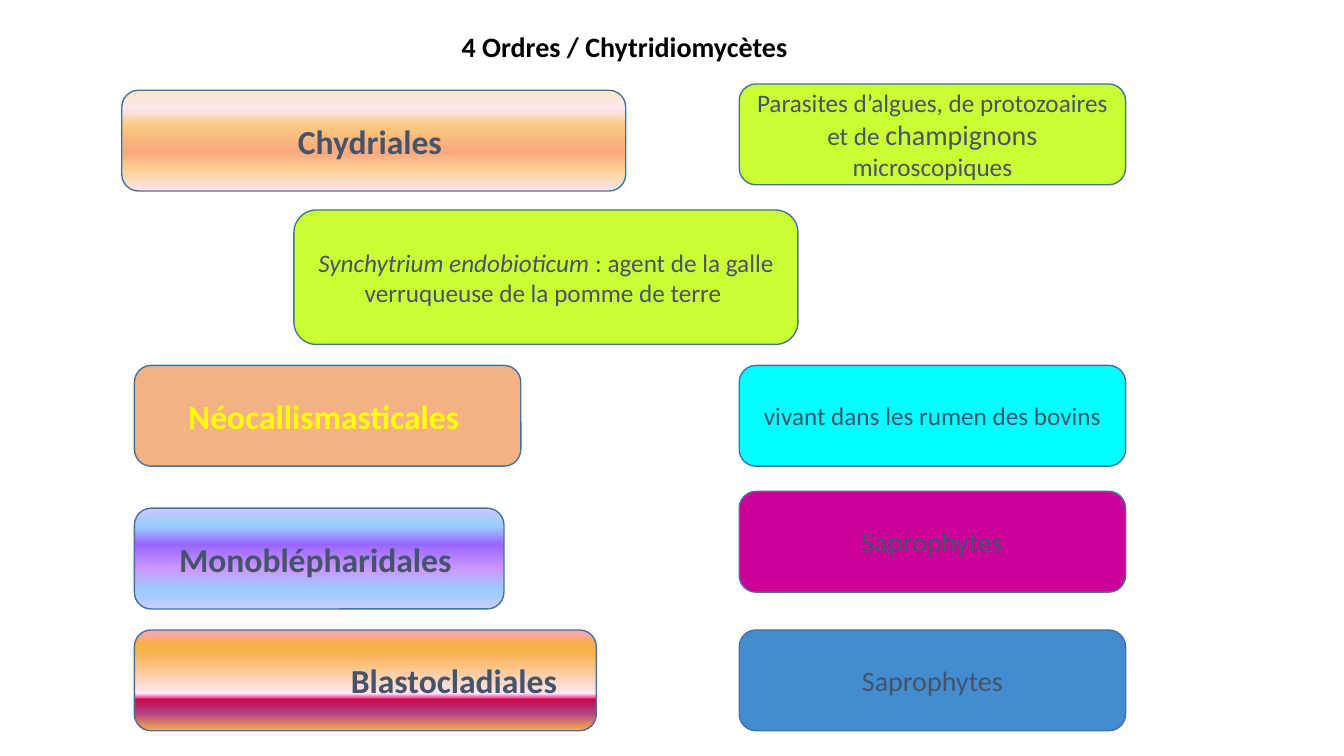
from lxml import etree
from pptx import Presentation
from pptx.dml.color import RGBColor
from pptx.enum.shapes import MSO_SHAPE
from pptx.enum.text import MSO_ANCHOR, PP_ALIGN
from pptx.oxml.ns import qn
from pptx.util import Emu, Pt

PX = 9525
ROUNDED = MSO_SHAPE.ROUNDED_RECTANGLE
MIDDLE = MSO_ANCHOR.MIDDLE
LEFT, CENTER = PP_ALIGN.LEFT, PP_ALIGN.CENTER

OUTLINE, SLATE, YELLOW, BLACK = "43739E", "44546A", "FFFF00", "000000"
LIME, CYAN, MAGENTA, BLUE, PEACH = "CCFF33", "00FFFF", "CC0099", "438CCF", "F4B183"

# Gradients run from top to bottom: (percent, colour)
SUNSET = [(0, "FBEAC7"), (18, "FEE7F2"), (36, "FAC77D"),
          (61, "FBA97D"), (82, "FBD49C"), (100, "FEE7F2")]
VIOLET = [(0, "CCCCFF"), (18, "99CCFF"), (36, "9966FF"),
          (61, "CC99FF"), (82, "99CCFF"), (100, "CCCCFF")]
EMBER = [(0, "FC9FCB"), (13, "F8B049"), (21, "F8B049"), (63, "FEE7F2"),
         (67, "F952A0"), (69, "C50849"), (82, "B43E85"), (100, "F8B049")]

ORDER_LEFT, TRAIT_LEFT = 128, 704
TRAIT_WIDTH, ROW_HEIGHT = 368, 96

# Orders: name, box, fill, text colour, paragraph level
ORDERS = [
    ("Chydriales", (116, 86, 480, ROW_HEIGHT), SUNSET, SLATE, 0),
    ("Néocallismasticales", (ORDER_LEFT, 348, 368, ROW_HEIGHT), PEACH, YELLOW, 0),
    ("Monoblépharidales", (ORDER_LEFT, 484, 352, ROW_HEIGHT), VIOLET, SLATE, 0),
    ("Blastocladiales", (ORDER_LEFT, 600, 440, ROW_HEIGHT), EMBER, SLATE, 4),
]

# Ways of life: top, fill, runs of (text, size)
TRAITS = [
    (80, LIME, [("Parasites d’algues, de protozoaires et de ", 18),
                ("champignons", 20), (" microscopiques", 18)]),
    (348, CYAN, [("vivant dans les rumen des bovins", 18)]),
    (468, MAGENTA, [("Saprophytes", 20)]),
    (600, BLUE, [("Saprophytes", 20)]),
]


def rgb(value):
    return RGBColor.from_string(value)


def place(shape, box):
    for side, length in zip(("left", "top", "width", "height"), box):
        setattr(shape, side, Emu(length * PX))


def add_run(paragraph, text, color=SLATE, **formats):
    run = paragraph.add_run()
    run.text = text
    for key, value in {"name": "Calibri", **formats}.items():
        setattr(run.font, key, value)
    run.font.color.rgb = rgb(color)


def fill_gradient(shape, stops):
    shape.fill.gradient()
    shape.fill.gradient_angle = 270
    stop_list = shape.fill._fill._gradFill.find(qn("a:gsLst"))
    for old_stop in list(stop_list):
        stop_list.remove(old_stop)
    for percent, color in stops:
        stop = etree.SubElement(stop_list, qn("a:gs"), pos=str(percent * 1000))
        etree.SubElement(stop, qn("a:srgbClr"), val=color)


def add_card(slide, box, fill):
    """Draw an outlined rounded box and return its paragraph."""
    card = slide.shapes.add_shape(ROUNDED, *(Emu(n * PX) for n in box))
    card.shadow.inherit = False
    if isinstance(fill, list):
        fill_gradient(card, fill)
    else:
        card.fill.solid()
        card.fill.fore_color.rgb = rgb(fill)
    card.line.color.rgb = rgb(OUTLINE)
    card.line.width = Pt(1)
    card.text_frame.word_wrap = True
    card.text_frame.vertical_anchor = MIDDLE
    paragraph = card.text_frame.paragraphs[0]
    paragraph.alignment = CENTER
    return paragraph


def add_title(slide, box):
    title = slide.shapes.title
    place(title, box)
    title.text_frame.vertical_anchor = MIDDLE
    heading = title.text_frame.paragraphs[0]
    heading.alignment = LEFT
    heading.line_spacing = 0.9
    add_run(heading, "4 Ordres / Chytridiomycètes", BLACK, size=Pt(20), bold=True)


def add_order(slide, name, box, fill, color, level):
    paragraph = add_card(slide, box, fill)
    if level:
        paragraph.level = level
        paragraph.alignment = LEFT
    add_run(paragraph, name + " ", color, size=Pt(24), bold=True)


def add_example(slide, box):
    paragraph = add_card(slide, box, LIME)
    add_run(paragraph, "Synchytrium endobioticum ", size=Pt(18), italic=True)
    add_run(paragraph, ": agent de la galle verruqueuse de la pomme de terre ",
            size=Pt(18))


def add_trait(slide, box, fill, runs):
    paragraph = add_card(slide, box, fill)
    for text, size in runs:
        add_run(paragraph, text, size=Pt(size))


def main():
    deck = Presentation()
    deck.slide_width, deck.slide_height = Emu(1280 * PX), Emu(720 * PX)
    slide = deck.slides.add_slide(deck.slide_layouts[5])

    add_title(slide, (430, 22, 440, 48))
    # Left column: the four orders
    for order in ORDERS:
        add_order(slide, *order)
    # Example species of the first order
    add_example(slide, (280, 200, 480, 128))
    # Right column: ways of life
    for top, fill, runs in TRAITS:
        add_trait(slide, (TRAIT_LEFT, top, TRAIT_WIDTH, ROW_HEIGHT), fill, runs)

    deck.save("out.pptx")


if __name__ == "__main__":
    main()
